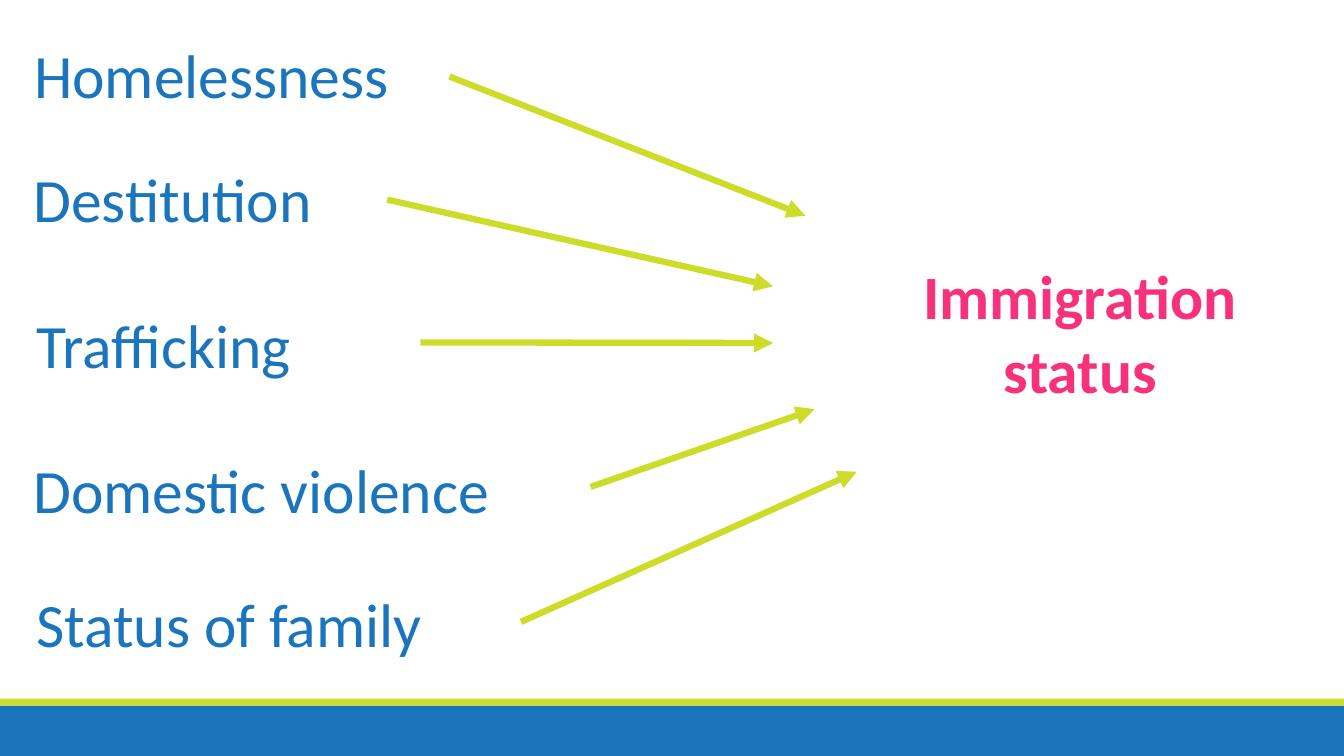
"""Build a slide on which five issues point to immigration status."""
import dataclasses

import lxml.etree
import pptx
import pptx.dml.color
import pptx.enum.shapes
import pptx.enum.text
import pptx.oxml.ns
import pptx.shapes.autoshape
import pptx.slide
import pptx.util

Pt = pptx.util.Pt
COLORS = {"blue": "1B75BC", "lime": "CDDC29", "pink": "F7317C", "white": "FFFFFF"}
WIDTH, HEIGHT = 960, 540


@dataclasses.dataclass(frozen=True)
class Box:
    """A place on the slide, in points."""
    left: float
    top: float
    width: float
    height: float


@dataclasses.dataclass(frozen=True)
class Issue:
    """A label with the start and end of its arrow."""
    text: str
    box: Box
    start: tuple[float, float]
    end: tuple[float, float]


ISSUES = [
    Issue("Homelessness", Box(17.3, 23, 478.8, 60.5), (321.1, 54.7), (575.3, 154.1)),
    Issue("Destitution", Box(16.6, 111.6, 478.8, 60.5), (276.5, 142.6), (552.2, 204.5)),
    Issue("Trafficking", Box(18.7, 216, 563, 60.5), (300.2, 244.6), (552.2, 245)),
    Issue("Domestic violence", Box(16.6, 319, 478.8, 113.8), (421.9, 347.8), (581.8, 292.3)),
    Issue("Status of family", Box(18.7, 414.7, 478.8, 60.5), (372.2, 444.2), (612, 337)),
]


def get_color(name: str) -> pptx.dml.color.RGBColor:
    """Return a named colour."""
    return pptx.dml.color.RGBColor.from_string(COLORS[name])


def add_block(slide: pptx.slide.Slide, box: Box, color: str) -> pptx.shapes.autoshape.Shape:
    """Draw a plain filled block."""
    block = slide.shapes.add_shape(
        pptx.enum.shapes.MSO_SHAPE.RECTANGLE,
        Pt(box.left), Pt(box.top), Pt(box.width), Pt(box.height))
    block.shadow.inherit = False
    block.fill.solid()
    block.fill.fore_color.rgb = get_color(color)
    block.line.fill.background()
    return block


def set_text(shape: pptx.shapes.autoshape.Shape, text: str, color: str,
             bold: bool, align: pptx.enum.text.PP_ALIGN) -> None:
    """Put one styled line of text in a shape."""
    frame = shape.text_frame
    frame.word_wrap = True
    frame.vertical_anchor = pptx.enum.text.MSO_ANCHOR.TOP
    line = frame.paragraphs[0]
    line.text = text
    line.alignment = align
    line.font.name = "Calibri"
    line.font.size = Pt(44)
    line.font.bold = bold
    line.font.color.rgb = get_color(color)


def add_label(slide: pptx.slide.Slide, issue: Issue) -> None:
    """Write the name of an issue."""
    box = issue.box
    label = slide.shapes.add_textbox(
        Pt(box.left), Pt(box.top), Pt(box.width), Pt(box.height))
    set_text(label, issue.text, "blue", False, pptx.enum.text.PP_ALIGN.LEFT)


def add_arrow(slide: pptx.slide.Slide, issue: Issue) -> None:
    """Draw the arrow of an issue."""
    arrow = slide.shapes.add_connector(
        pptx.enum.shapes.MSO_CONNECTOR.STRAIGHT,
        *(Pt(value) for value in issue.start + issue.end))
    arrow.line.color.rgb = get_color("lime")
    arrow.line.width = Pt(4.5)
    qn = pptx.oxml.ns.qn
    props = arrow.line._get_or_add_ln()
    lxml.etree.SubElement(props, qn("a:tailEnd"), type="triangle")
    lxml.etree.SubElement(props.getparent(), qn("a:effectLst"))


def main() -> None:
    """Build and save the slide."""
    deck = pptx.Presentation()
    deck.slide_width, deck.slide_height = Pt(WIDTH), Pt(HEIGHT)
    slide = deck.slides.add_slide(deck.slide_layouts[6])
    add_block(slide, Box(0, 504, WIDTH, 36), "blue")
    add_block(slide, Box(0, 499, WIDTH, 5), "lime")
    status = add_block(slide, Box(598.3, 180.7, 346.3, 113.8), "white")
    set_text(status, "Immigration status", "pink", True, pptx.enum.text.PP_ALIGN.CENTER)
    for issue in ISSUES:
        add_label(slide, issue)
    for issue in ISSUES:
        add_arrow(slide, issue)
    deck.save("out.pptx")


if __name__ == "__main__":
    main()
